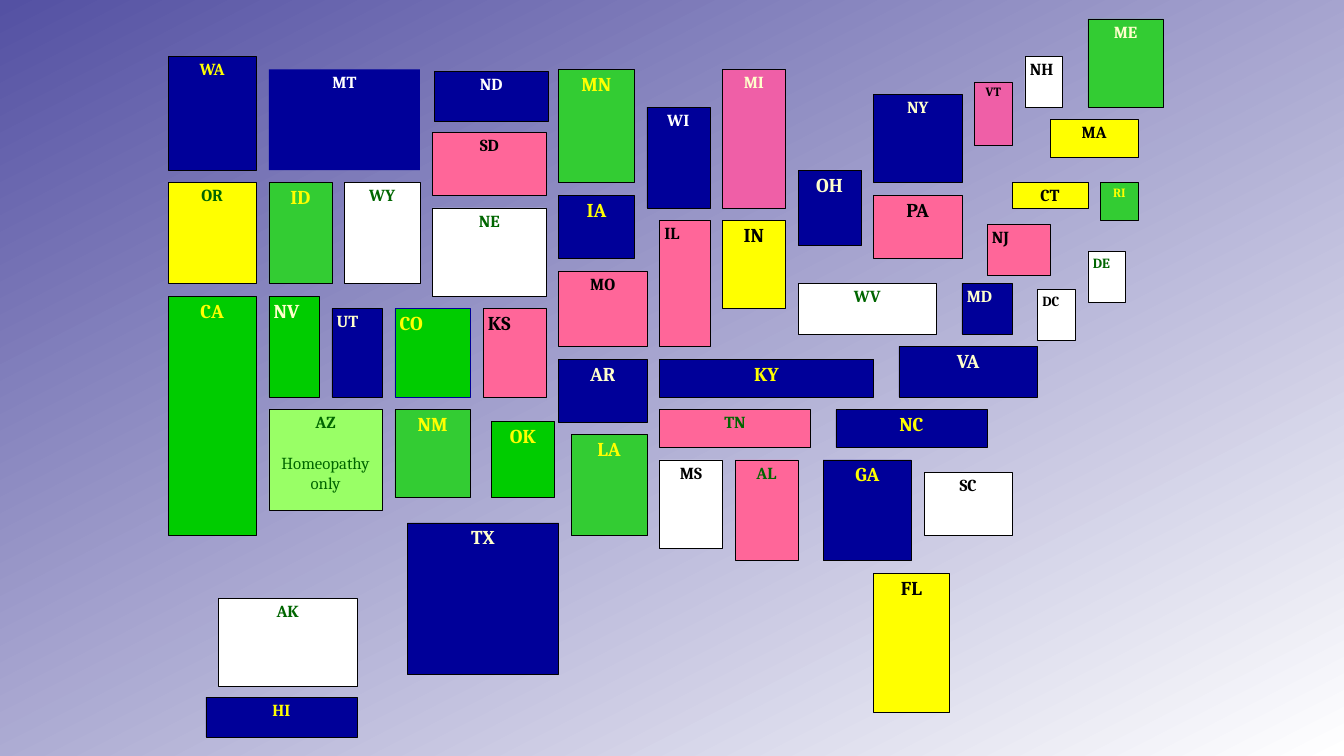
"""Build a block map of the states, coloured by group."""
from dataclasses import dataclass

from pptx import Presentation
from pptx.dml.color import RGBColor
from pptx.enum.shapes import MSO_SHAPE
from pptx.enum.text import MSO_ANCHOR, PP_ALIGN
from pptx.util import Pt

NAVY = RGBColor(0x00, 0x00, 0x99)
GREEN = RGBColor(0x00, 0xCC, 0x00)
LEAF = RGBColor(0x33, 0xCC, 0x33)
LIME = RGBColor(0x99, 0xFF, 0x66)
PINK = RGBColor(0xFF, 0x66, 0x99)
ORCHID = RGBColor(0xEF, 0x5F, 0xA7)
YELLOW = RGBColor(0xFF, 0xFF, 0x00)
WHITE = RGBColor(0xFF, 0xFF, 0xFF)
CREAM = RGBColor(0xFF, 0xFF, 0xCC)
FOREST = RGBColor(0x00, 0x66, 0x00)
BLACK = RGBColor(0x00, 0x00, 0x00)
VIOLET = RGBColor(0x54, 0x51, 0xA3)

FONT = "Cambria"
UNIT = 18
MAP_LEFT = 240
MAP_TOP = 81
LEFT = PP_ALIGN.LEFT


@dataclass(frozen=True)
class State:
    """A state block placed in grid units from the corner of the map."""

    code: str
    column: float
    row: float
    width: float
    height: float
    fill: RGBColor
    color: RGBColor
    size: int = 24
    align: PP_ALIGN = PP_ALIGN.CENTER
    outline: RGBColor | None = BLACK
    note: str = ""


STATES = [
    State("WA", 0, 0, 7, 9, NAVY, YELLOW),
    State("OR", 0, 10, 7, 8, YELLOW, FOREST),
    State("CA", 0, 19, 7, 19, GREEN, YELLOW, 28),
    State("AK", 4, 43, 11, 7, WHITE, FOREST),
    State("HI", 3, 50.83, 12, 3.16, NAVY, YELLOW),
    State("MT", 8, 1, 12, 8, NAVY, WHITE, outline=None),
    State("ID", 8, 10, 5, 8, LEAF, YELLOW, 28),
    State("WY", 14, 10, 6, 8, WHITE, FOREST),
    State("NV", 8, 19, 4, 8, GREEN, CREAM, 28, LEFT),
    State("UT", 13, 20, 4, 7, NAVY, CREAM, 24, LEFT),
    State("CO", 18, 20, 6, 7, GREEN, YELLOW, 28, LEFT, NAVY),
    State("AZ", 8, 28, 9, 8, LIME, FOREST, note="Homeopathy only"),
    State("NM", 18, 28, 6, 7, LEAF, YELLOW, 28),
    State("ND", 21.16, 1.16, 9, 4, NAVY, WHITE),
    State("SD", 21, 6, 9, 5, PINK, BLACK),
    State("NE", 21, 12, 9, 7, WHITE, FOREST),
    State("KS", 25, 20, 5, 7, PINK, BLACK, 28, LEFT),
    State("OK", 25.67, 28.95, 5, 6, GREEN, YELLOW, 28),
    State("TX", 19, 37, 12, 12, NAVY, CREAM, 28),
    State("MN", 31, 1, 6, 9, LEAF, YELLOW, 28),
    State("IA", 31, 11, 6, 5, NAVY, YELLOW, 28),
    State("MO", 31, 17, 7, 6, PINK, BLACK),
    State("AR", 31, 24, 7, 5, NAVY, CREAM, 28),
    State("LA", 32, 30, 6, 8, LEAF, YELLOW, 28),
    State("WI", 38, 4, 5, 8, NAVY, WHITE),
    State("MI", 44, 1, 5, 11, ORCHID, CREAM),
    State("IL", 39, 13, 4, 10, PINK, BLACK, 24, LEFT),
    State("IN", 44, 13, 5, 7, YELLOW, BLACK, 28),
    State("OH", 50, 9, 5, 6, NAVY, CREAM, 28),
    State("KY", 39, 24, 17, 3, NAVY, YELLOW, 28),
    State("TN", 39, 28, 12, 3, PINK, FOREST),
    State("MS", 39, 32, 5, 7, WHITE, BLACK),
    State("AL", 45, 32, 5, 8, PINK, FOREST),
    State("GA", 52, 32, 7, 8, NAVY, YELLOW, 28),
    State("FL", 56, 41, 6, 11, YELLOW, BLACK, 28),
    State("SC", 60, 33, 7, 5, WHITE, BLACK),
    State("NC", 53, 28, 12, 3, NAVY, YELLOW, 28),
    State("VA", 58, 23, 11, 4, NAVY, CREAM, 28),
    State("WV", 50, 18, 11, 4, WHITE, FOREST),
    State("MD", 63, 18, 4, 4, NAVY, CREAM, 24, LEFT),
    State("DC", 69, 18.48, 3, 4, WHITE, BLACK, 20, LEFT),
    State("DE", 73, 15.48, 3, 4, WHITE, FOREST, 20, LEFT),
    State("NJ", 65, 13.32, 5, 4, PINK, BLACK, 24, LEFT),
    State("PA", 56, 11, 7, 5, PINK, BLACK, 28),
    State("NY", 56, 3, 7, 7, NAVY, CREAM),
    State("CT", 67, 10, 6, 2, YELLOW, BLACK),
    State("RI", 74, 10, 3, 3, LEAF, YELLOW, 18),
    State("MA", 70, 5, 7, 3, YELLOW, BLACK),
    State("VT", 64, 2, 3, 5, ORCHID, BLACK, 18),
    State("NH", 68, 0, 3, 4, WHITE, BLACK, 24, LEFT),
    State("ME", 73, -3, 6, 7, LEAF, CREAM),
]


def write(para, text: str, *, size: int, color: RGBColor, align: PP_ALIGN, bold: bool = True) -> None:
    """Put formatted text into a paragraph."""
    para.alignment = align
    span = para.add_run()
    span.text = text
    span.font.name = FONT
    span.font.size = Pt(size)
    span.font.bold = bold
    span.font.color.rgb = color


def draw_state(page, state: State) -> None:
    """Draw one state block with its label and any note."""
    box = page.shapes.add_shape(
        MSO_SHAPE.RECTANGLE,
        Pt(MAP_LEFT + UNIT * state.column), Pt(MAP_TOP + UNIT * state.row),
        Pt(UNIT * state.width), Pt(UNIT * state.height),
    )
    box.shadow.inherit = False
    box.fill.solid()
    box.fill.fore_color.rgb = state.fill
    if state.outline is None:
        box.line.fill.background()
    else:
        box.line.color.rgb = state.outline
        box.line.width = Pt(0.75)
    frame = box.text_frame
    frame.word_wrap = True
    frame.vertical_anchor = MSO_ANCHOR.TOP
    look = {"size": state.size, "color": state.color, "align": state.align}
    write(frame.paragraphs[0], state.code, **look)
    if state.note:
        para = frame.add_paragraph()
        para.space_before = Pt(29)
        write(para, state.note, bold=False, **look)


def paint_background(page) -> None:
    """Fill the page with a violet to white gradient."""
    fill = page.background.fill
    fill.gradient()
    fill.gradient_angle = 360 - 63
    for stop, color in zip(fill.gradient_stops, (VIOLET, WHITE)):
        stop.color.rgb = color


def main() -> None:
    """Create the deck and save it."""
    deck = Presentation()
    deck.slide_width = Pt(1920)
    deck.slide_height = Pt(1080)
    page = deck.slides.add_slide(deck.slide_layouts[6])
    paint_background(page)
    for state in STATES:
        draw_state(page, state)
    deck.save("out.pptx")


if __name__ == "__main__":
    main()
